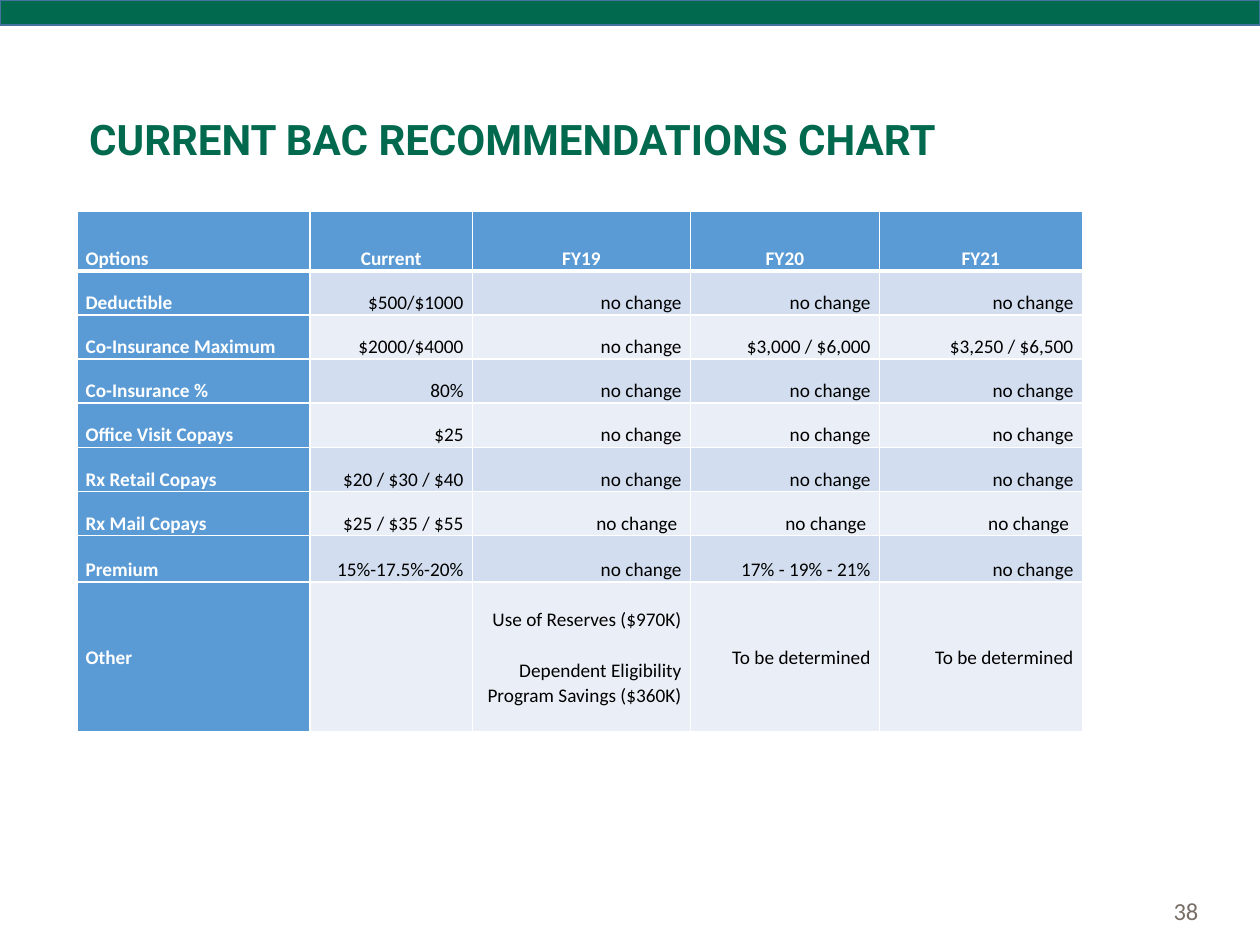
from dataclasses import dataclass

from lxml.etree import SubElement
from pptx import Presentation
from pptx.dml.color import RGBColor
from pptx.enum.shapes import MSO_SHAPE
from pptx.enum.text import MSO_ANCHOR, PP_ALIGN
from pptx.oxml.ns import qn
from pptx.util import Inches, Pt


@dataclass(frozen=True)
class Theme:
    green: str = "00694E"
    banner_line: str = "43739E"
    blue: str = "5B9BD5"
    bands: tuple = ("D2DEEF", "EAEFF7")
    white: str = "FFFFFF"
    black: str = "000000"
    gray: str = "776F67"
    heading_font: str = "Roboto"
    body_font: str = "Calibri"
    title_size: int = 24
    number_size: int = 14
    table_size: int = 11


class SlideBuilder:
    """Draws styled elements on one slide."""

    def __init__(self, page, theme):
        self.page = page
        self.theme = theme

    def format_text(self, frame, font, size, color, bold, align, spacing):
        for paragraph in frame.paragraphs:
            paragraph.alignment = align
            paragraph.line_spacing = spacing
            for span in paragraph.runs:
                span.font.name = font
                span.font.size = Pt(size)
                span.font.bold = bold
                span.font.color.rgb = RGBColor.from_string(color)

    def banner(self, left, top, width, height):
        box = self.page.shapes.add_shape(
            MSO_SHAPE.RECTANGLE, Inches(left), Inches(top), Inches(width), Inches(height)
        )
        box.shadow.inherit = False
        box.fill.solid()
        box.fill.fore_color.rgb = RGBColor.from_string(self.theme.green)
        box.line.color.rgb = RGBColor.from_string(self.theme.banner_line)
        box.line.width = Pt(1)

    def text(self, text, left, top, width, height, font, size, color,
             bold=False, align=PP_ALIGN.LEFT, spacing=1.0):
        box = self.page.shapes.add_textbox(
            Inches(left), Inches(top), Inches(width), Inches(height)
        )
        frame = box.text_frame
        frame.word_wrap = True
        frame.vertical_anchor = MSO_ANCHOR.MIDDLE
        frame.text = text
        self.format_text(frame, font, size, color, bold, align, spacing)

    def border(self, cell, side, width):
        properties = cell._tc.get_or_add_tcPr()
        line = SubElement(properties, qn(f"a:ln{side}"), w=str(Pt(width)))
        fill = SubElement(line, qn("a:solidFill"))
        SubElement(fill, qn("a:srgbClr"), val=self.theme.white)

    def cell(self, cell, text, row, column, last_row):
        theme = self.theme
        is_label = row == 0 or column == 0
        if column == 0:
            align = PP_ALIGN.LEFT
        else:
            align = PP_ALIGN.CENTER if row == 0 else PP_ALIGN.RIGHT
        cell.margin_left = cell.margin_right = Inches(0.07)
        cell.margin_top = cell.margin_bottom = 0
        cell.vertical_anchor = MSO_ANCHOR.MIDDLE if row == last_row else MSO_ANCHOR.BOTTOM
        for side in "LRTB":
            under_header = (row, side) in ((0, "B"), (1, "T"))
            self.border(cell, side, 3 if under_header else 1)
        cell.fill.solid()
        cell.fill.fore_color.rgb = RGBColor.from_string(
            theme.blue if is_label else theme.bands[(row - 1) % 2]
        )
        cell.text_frame.text = text
        self.format_text(
            cell.text_frame, theme.body_font, theme.table_size,
            theme.white if is_label else theme.black, is_label, align, 1.07,
        )
        for paragraph in cell.text_frame.paragraphs[1:]:
            paragraph.space_before = Pt(14.5)

    def table(self, rows, left, top, widths, heights):
        frame = self.page.shapes.add_table(
            len(rows), len(widths), Inches(left), Inches(top),
            Inches(sum(widths)), Inches(sum(heights)),
        )
        table = frame.table
        for column, width in zip(table.columns, widths):
            column.width = Inches(width)
        for row, height in zip(table.rows, heights):
            row.height = Inches(height)
        for row, values in enumerate(rows):
            for column, value in enumerate(values):
                self.cell(table.cell(row, column), value, row, column, len(rows) - 1)


SAME = "no change"
OPTIONS = [
    ("Options", "Current", "FY19", "FY20", "FY21"),
    ("Deductible", "$500/$1000", SAME, SAME, SAME),
    ("Co-Insurance Maximum", "$2000/$4000", SAME, "$3,000 / $6,000", "$3,250 / $6,500"),
    ("Co-Insurance %", "80%", SAME, SAME, SAME),
    ("Office Visit Copays", "$25", SAME, SAME, SAME),
    ("Rx Retail Copays", "$20 / $30 / $40", SAME, SAME, SAME),
    ("Rx Mail Copays", "$25 / $35 / $55", *[SAME + " "] * 3),
    ("Premium", "15%-17.5%-20%", SAME, "17% - 19% - 21%", SAME),
    ("Other", "",
     "Use of Reserves ($970K)\nDependent Eligibility Program Savings ($360K)",
     "To be determined", "To be determined"),
]


def main():
    deck = Presentation()
    deck.slide_width, deck.slide_height = Inches(10), Inches(7.5)
    theme = Theme()
    builder = SlideBuilder(deck.slides.add_slide(deck.slide_layouts[6]), theme)
    builder.text("38", 6.61, 7.03, 3, 0.4, theme.body_font, theme.number_size,
                 theme.gray, align=PP_ALIGN.RIGHT)
    builder.banner(0, 0, 10, 0.2)
    builder.table(OPTIONS, 0.61, 1.68, [1.85, 1.29, 1.73, 1.5, 1.61],
                  [0.47] + [0.35] * 6 + [0.37, 1.19])
    builder.text("CURRENT BAC RECOMMENDATIONS CHART", 0.61, 0.4, 8.62, 1.45,
                 theme.heading_font, theme.title_size, theme.green, bold=True, spacing=0.9)
    deck.save("out.pptx")


if __name__ == "__main__":
    main()
